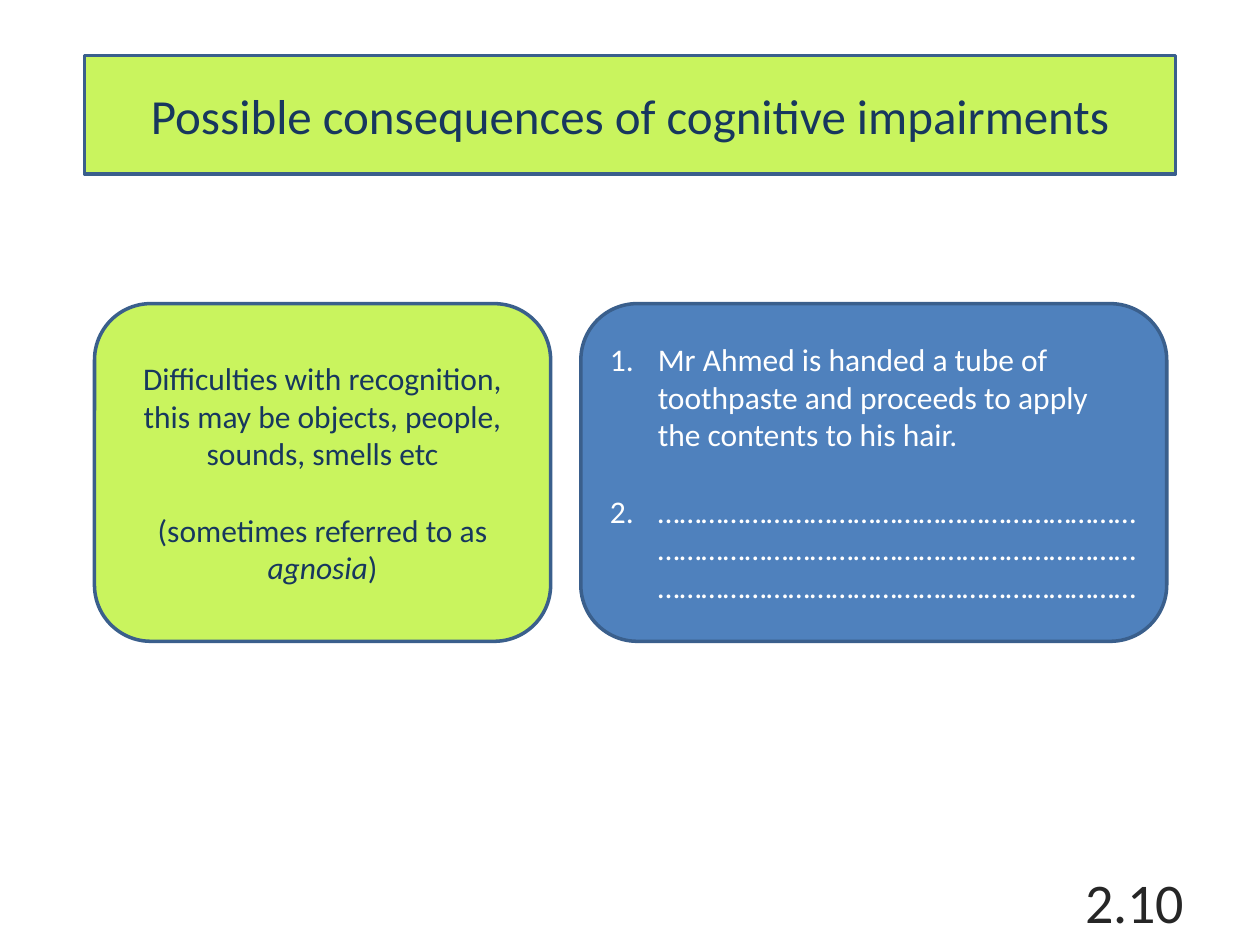
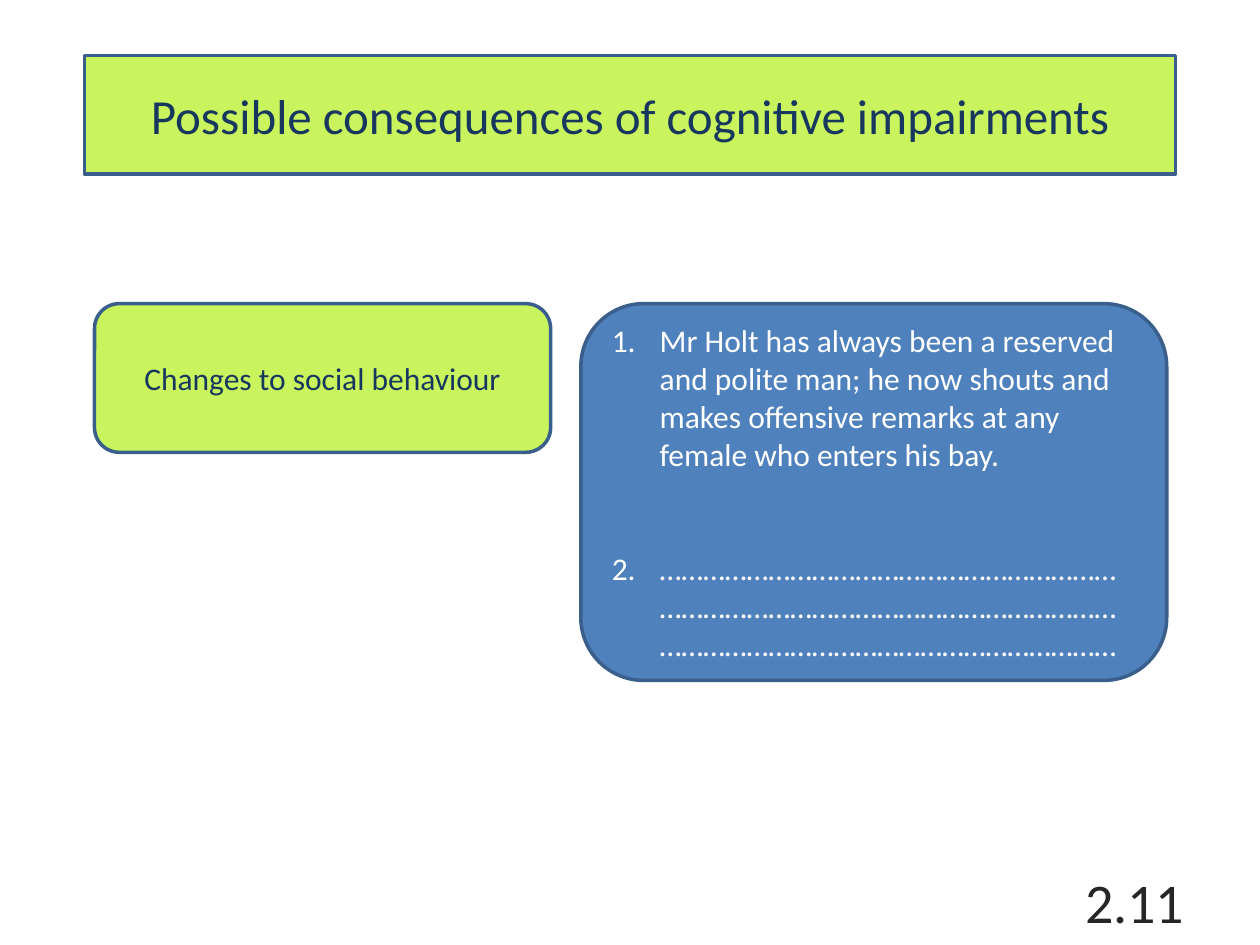
"""Build two slides on the consequences of cognitive impairments."""
import dataclasses

import lxml.etree
import pptx
import pptx.dml.color
import pptx.enum.text
import pptx.oxml.ns
import pptx.util

Inches = pptx.util.Inches
Pt = pptx.util.Pt
RGB = pptx.dml.color.RGBColor.from_string
ALIGN = pptx.enum.text.PP_ALIGN
MIDDLE = pptx.enum.text.MSO_ANCHOR.MIDDLE
FIXED = pptx.enum.text.MSO_AUTO_SIZE.NONE
qn = pptx.oxml.ns.qn


@dataclasses.dataclass(frozen=True)
class Theme:
    """Colours, type sizes and spacing of the deck."""
    font: str = "Calibri"
    lime: str = "C9F45E"
    blue: str = "4F81BD"
    edge: str = "3A5F8C"
    navy: str = "17375E"
    white: str = "FFFFFF"
    grey: str = "262626"
    title: int = 28
    body: int = 18
    page: int = 32
    row: int = 22
    hang: float = 0.38


THEME = Theme()
TITLE = "Possible consequences of cognitive impairments"
DOT = "…"
SLIDES = [
    dict(
        page="2.10",
        issue=[
            [("Difficulties with recognition, this may be objects, people, "
              "sounds, smells etc", False)],
            [("(sometimes referred to as ", False), ("agnosia", True), (")", False)],
        ],
        tall=2.68,
        cases=["Mr Ahmed is handed a tube of toothpaste and proceeds to apply "
               "the contents to his hair.", DOT * 66],
        deep=2.68,
        gap=1,
    ),
    dict(
        page="2.11",
        issue=[[("Changes to social behaviour", False)]],
        tall=1.18,
        cases=["Mr Holt has always been a reserved and polite man; he now shouts "
               "and makes offensive remarks at any female who enters his bay.",
               DOT * 63],
        deep=2.99,
        gap=2,
    ),
]


def put(item, **values):
    """Set each given value as an attribute of the item."""
    for name, value in values.items():
        setattr(item, name, value)


def place(box, left, top, width, height):
    """Move a box and centre its text upright."""
    put(box, left=Inches(left), top=Inches(top),
        width=Inches(width), height=Inches(height))
    put(box.text_frame, word_wrap=True, auto_size=FIXED, vertical_anchor=MIDDLE)


def panel(box, area, fill):
    """Turn a placeholder into a filled round panel."""
    place(box, *area)
    geom = lxml.etree.SubElement(box._element.spPr, qn("a:prstGeom"), prst="roundRect")
    lxml.etree.SubElement(geom, qn("a:avLst"))
    box.fill.solid()
    box.fill.fore_color.rgb = RGB(fill)
    box.line.width = Pt(2)
    box.line.color.rgb = RGB(THEME.edge)


def mark(para, count):
    """Number a paragraph, or clear its bullet and indent."""
    props = para._p.get_or_add_pPr()
    hang = Inches(THEME.hang) if count else 0
    props.set("marL", str(hang))
    props.set("indent", str(-hang))
    if count:
        lxml.etree.SubElement(props, qn("a:buFont"), typeface="+mj-lt")
        lxml.etree.SubElement(props, qn("a:buAutoNum"), type="arabicPeriod")
    else:
        lxml.etree.SubElement(props, qn("a:buNone"))


def write(box, paras, size, color, align, gap=0, count=False):
    """Fill a box with paragraphs made of (text, italic) runs."""
    frame = box.text_frame
    for place_no, runs in enumerate(paras):
        para = frame.add_paragraph() if place_no else frame.paragraphs[0]
        mark(para, count)
        before = gap * THEME.row if place_no else 0
        put(para, alignment=align, space_before=Pt(before))
        for text, slant in runs:
            run = para.add_run()
            run.text = text
            put(run.font, name=THEME.font, size=Pt(size), italic=slant)
            run.font.color.rgb = RGB(color)


def build(deck, data):
    """Add one slide with its title, issue, cases and page number."""
    slide = deck.slides.add_slide(deck.slide_layouts.get_by_name("Two Content"))
    title, issue, cases = slide.placeholders

    panel(title, (0.67, 0.44, 8.66, 0.94), THEME.lime)
    write(title, [[(TITLE, False)]], THEME.title, THEME.navy, ALIGN.CENTER)

    panel(issue, (0.75, 2.41, 3.62, data["tall"]), THEME.lime)
    write(issue, data["issue"], THEME.body, THEME.navy, ALIGN.CENTER, gap=1)

    panel(cases, (4.61, 2.41, 4.65, data["deep"]), THEME.blue)
    write(cases, [[(case, False)] for case in data["cases"]], THEME.body,
          THEME.white, ALIGN.LEFT, gap=data["gap"], count=True)

    page = slide.shapes.add_textbox(0, 0, 0, 0)
    place(page, 7.17, 6.95, 2.33, 0.4)
    write(page, [[(data["page"], False)]], THEME.page, THEME.grey, ALIGN.RIGHT)


def main():
    """Build and save the deck."""
    deck = pptx.Presentation()
    put(deck, slide_width=Inches(10), slide_height=Inches(7.5))
    for data in SLIDES:
        build(deck, data)
    deck.save("out.pptx")


if __name__ == "__main__":
    main()
